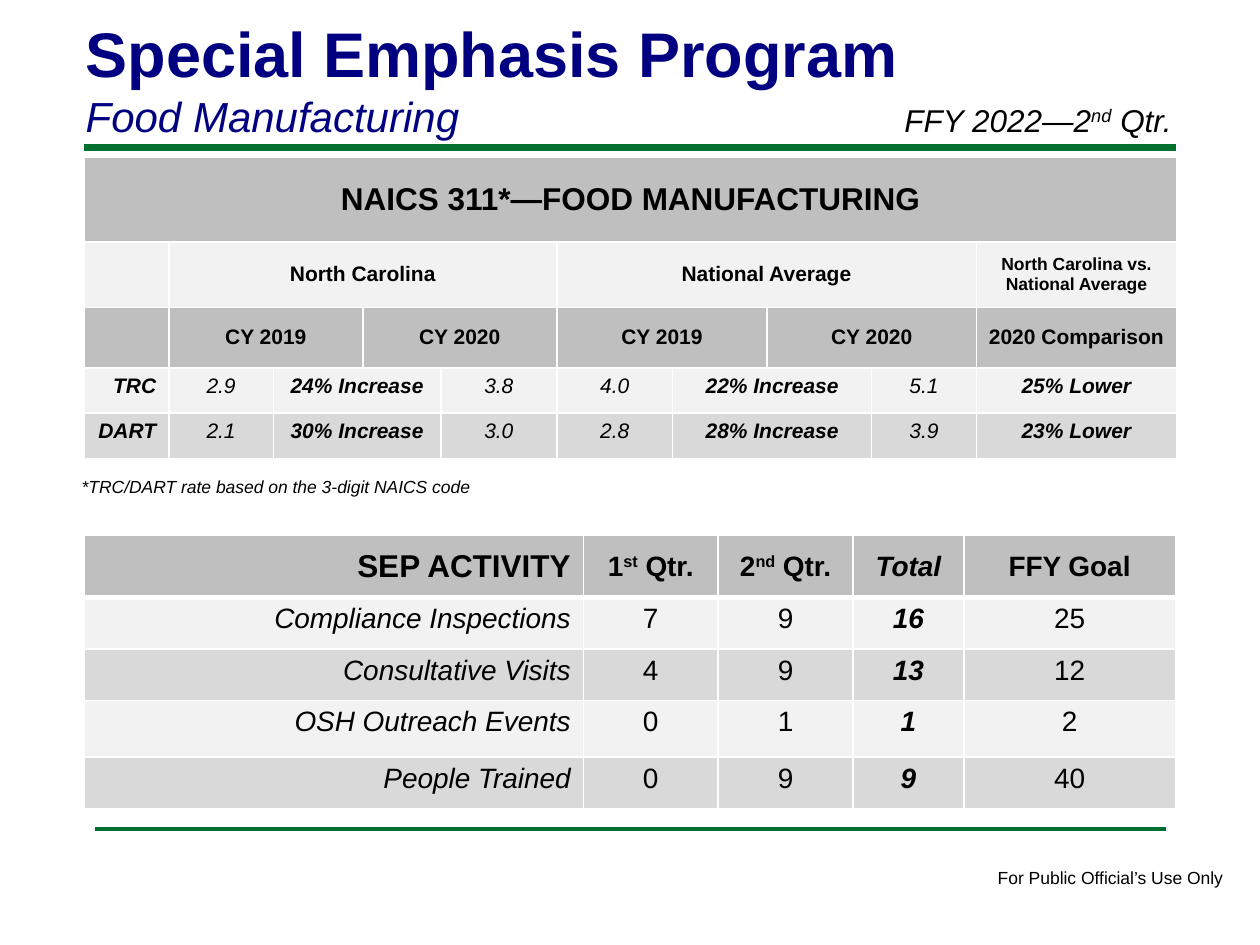
from lxml.etree import SubElement
from pptx import Presentation
from pptx.dml.color import RGBColor
from pptx.enum.shapes import MSO_CONNECTOR
from pptx.enum.text import MSO_ANCHOR, PP_ALIGN
from pptx.oxml.ns import qn
from pptx.util import Inches, Pt

NAVY = RGBColor(0x00, 0x00, 0x80)
GREEN = RGBColor(0x00, 0x70, 0x30)
BLACK = RGBColor(0x00, 0x00, 0x00)
WHITE = RGBColor(0xFF, 0xFF, 0xFF)
HEADER = RGBColor(0xBF, 0xBF, 0xBF)
LIGHT = RGBColor(0xF2, 0xF2, 0xF2)
DARK = RGBColor(0xD9, 0xD9, 0xD9)

RULES = [(0.67, 9.33, 1.17, 4), (0.75, 9.25, 6.58, 2)]
TITLE = [("Special Emphasis Program", 36, "b"), ("Food Manufacturing", 24, "i")]
QUARTER = "FFY 2022—2^nd^ Qtr."
RATE_NOTE = "*TRC/DART rate based on the 3-digit NAICS code"
FOOTER = "For Public Official’s Use Only"

RATE_COLUMNS = [0.67, 0.83, 0.71, 0.62, 0.92, 0.92, 0.75, 0.83, 0.83, 1.59]
RATE_HEIGHTS = [0.67, 0.52, 0.48, 0.36, 0.36]
RATE_SPANS = [[10], [1, 4, 4, 1], [1, 2, 2, 2, 2, 1]] + [[1, 1, 2, 1, 1, 2, 1, 1]] * 2
RATE_HEADERS = [
    ["NAICS 311*—FOOD MANUFACTURING"],
    ["", "North Carolina", "National Average", "North Carolina vs. National Average"],
    ["", "CY 2019", "CY 2020", "CY 2019", "CY 2020", "2020 Comparison"],
]
RATES = [
    ["TRC", "2.9", "24% Increase", "3.8", "4.0", "22% Increase", "5.1", "25% Lower"],
    ["DART", "2.1", "30% Increase", "3.0", "2.8", "28% Increase", "3.9", "23% Lower"],
]
RATE_STYLES = ["bi", "i", "bi", "i", "i", "bi", "i", "bi"]

ACTIVITY_COLUMNS = [3.96, 1.07, 1.07, 0.88, 1.68]
ACTIVITY_HEIGHTS = [0.49, 0.41, 0.41, 0.45, 0.41]
ACTIVITY_HEADERS = ["SEP ACTIVITY", "1^st^ Qtr.", "2^nd^ Qtr.", "Total", "FFY Goal"]
ACTIVITIES = [
    ["Compliance Inspections", "7", "9", "16", "25"],
    ["Consultative Visits", "4", "9", "13", "12"],
    ["OSH Outreach Events", "0", "1", "1", "2"],
    ["People Trained", "0", "9", "9", "40"],
]
ACTIVITY_STYLES = ["i", "", "", "bi", ""]


def write(para, text, size, style="", color=BLACK, align=PP_ALIGN.LEFT):
    para.alignment = align
    for index, part in enumerate(text.split("^")):
        span = para.add_run()
        span.text = part
        span.font.name = "Arial"
        span.font.size = Pt(size)
        span.font.bold = "b" in style
        span.font.italic = "i" in style
        span.font.color.rgb = color
        if index % 2:
            span.font._element.set("baseline", "30000")


def add_text(page, place, text, size, style="", wrap=False):
    box = page.shapes.add_textbox(*map(Inches, place))
    box.text_frame.word_wrap = wrap
    write(box.text_frame.paragraphs[0], text, size, style)


def add_rule(page, left, right, top, weight):
    rule = page.shapes.add_connector(
        MSO_CONNECTOR.STRAIGHT, Inches(left), Inches(top), Inches(right), Inches(top))
    rule.line.color.rgb = GREEN
    rule.line.width = Pt(weight)
    SubElement(rule._element.spPr, qn("a:effectLst"))


def border(cell, bottom):
    properties = cell._tc.get_or_add_tcPr()
    weights = {"a:lnL": 1, "a:lnR": 1, "a:lnT": 1, "a:lnB": bottom}
    for index, (tag, weight) in enumerate(weights.items()):
        line = SubElement(properties, qn(tag), w=str(Pt(weight)))
        fill = SubElement(line, qn("a:solidFill"))
        SubElement(fill, qn("a:srgbClr"), val=str(WHITE))
        properties.insert(index, line)


def add_grid(page, top, widths, heights, fills, header_bottom=1):
    frame = page.shapes.add_table(len(heights), len(widths), Inches(0.67), Inches(top),
                                  Inches(sum(widths)), Inches(sum(heights)))
    table = frame.table
    for column, width in zip(table.columns, widths):
        column.width = Inches(width)
    for index, (row, height) in enumerate(zip(table.rows, heights)):
        row.height = Inches(height)
        for cell in row.cells:
            cell.fill.solid()
            cell.fill.fore_color.rgb = fills[index]
            border(cell, header_bottom if index == 0 else 1)
    return table


def fill_cell(cell, text, size, style, align=PP_ALIGN.CENTER, middle=False):
    if middle:
        cell.vertical_anchor = MSO_ANCHOR.MIDDLE
    if text:
        write(cell.text_frame.paragraphs[0], text, size, style, align=align)


def add_rates(page):
    table = add_grid(page, 1.25, RATE_COLUMNS, RATE_HEIGHTS,
                     [HEADER, LIGHT, HEADER, LIGHT, DARK])
    for row, texts in enumerate(RATE_HEADERS + RATES):
        header = row < len(RATE_HEADERS)
        column = 0
        for index, (text, width) in enumerate(zip(texts, RATE_SPANS[row])):
            cell = table.cell(row, column)
            if width > 1:
                cell.merge(table.cell(row, column + width - 1))
            size = 18 if row == 0 else 10 if row == 1 and index == 3 else 12
            style = "b" if header else RATE_STYLES[index]
            align = PP_ALIGN.CENTER if header or index else PP_ALIGN.RIGHT
            fill_cell(cell, text, size, style, align, header)
            column += width
        if not header:
            table.cell(row, 0).margin_left = Inches(0.05)


def add_activities(page):
    table = add_grid(page, 4.25, ACTIVITY_COLUMNS, ACTIVITY_HEIGHTS,
                     [HEADER, LIGHT, DARK, LIGHT, DARK], header_bottom=3)
    for row, texts in enumerate([ACTIVITY_HEADERS] + ACTIVITIES):
        for column, text in enumerate(texts):
            header = row == 0
            size = 18 if header and column == 0 else 16
            style = ACTIVITY_STYLES[column]
            if header:
                style = "bi" if text == "Total" else "b"
            align = PP_ALIGN.CENTER if column else PP_ALIGN.RIGHT
            fill_cell(table.cell(row, column), text, size, style, align, header)


def add_title(page):
    title = page.shapes.title
    title.left, title.top, title.width, title.height = map(Inches, (0.58, 0.06, 8.25, 1.11))
    frame = title.text_frame
    frame.word_wrap = True
    frame.vertical_anchor = MSO_ANCHOR.MIDDLE
    for index, (text, size, style) in enumerate(TITLE):
        para = frame.add_paragraph() if index else frame.paragraphs[0]
        write(para, text, size, style, NAVY)


def main():
    deck = Presentation()
    deck.slide_width, deck.slide_height = Inches(10), Inches(7.5)
    page = deck.slides.add_slide(deck.slide_layouts[5])
    for rule in RULES:
        add_rule(page, *rule)
    add_text(page, (7.82, 6.83, 2.01, 0.27), FOOTER, 10)
    add_title(page)
    add_text(page, (0.55, 3.73, 3.38, 0.27), RATE_NOTE, 10, "i")
    add_activities(page)
    add_rates(page)
    add_text(page, (7.08, 0.75, 2.5, 0.4), QUARTER, 18, "i", wrap=True)
    deck.save("out.pptx")


if __name__ == "__main__":
    main()
